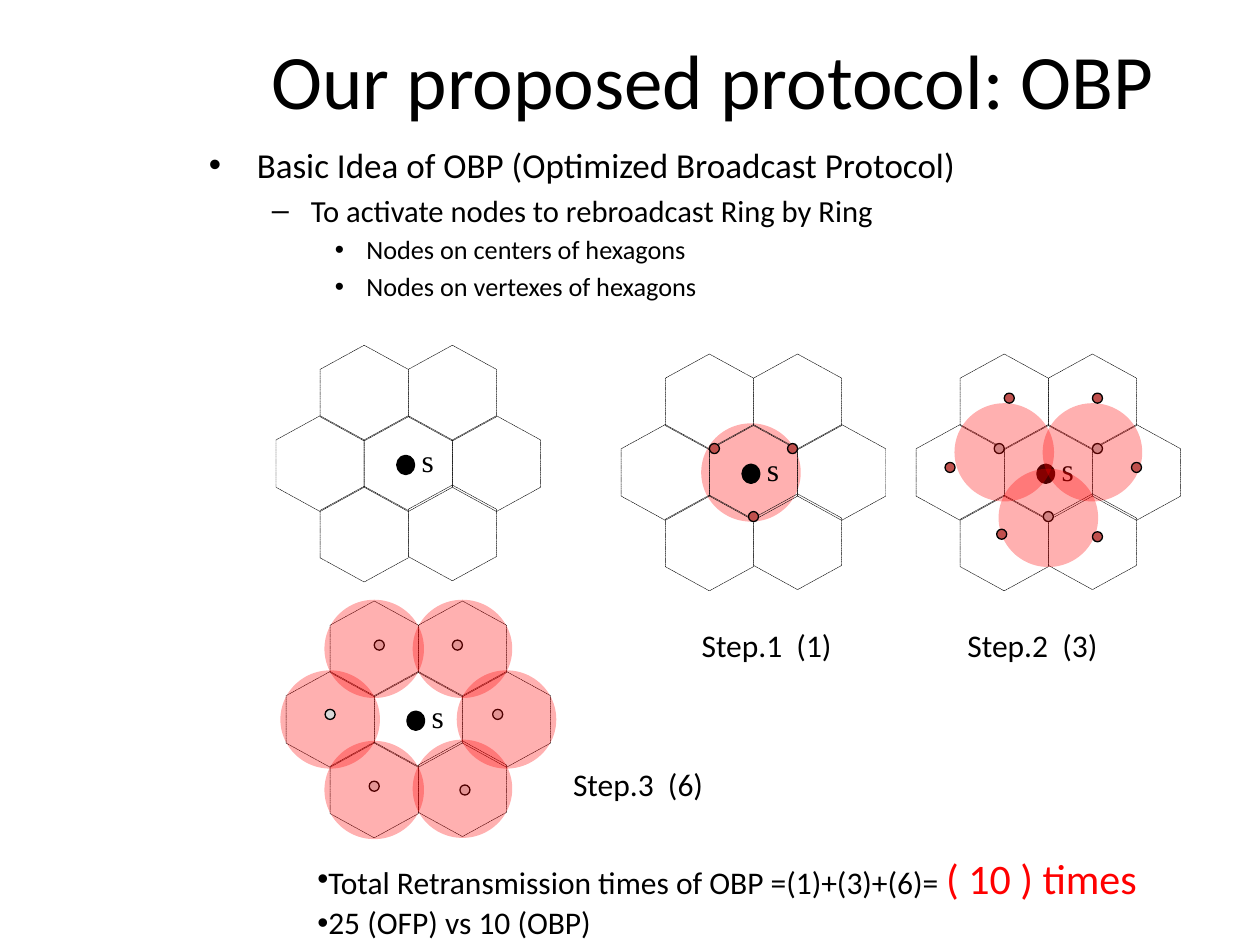
from lxml.etree import SubElement
from pptx import Presentation
from pptx.dml.color import RGBColor
from pptx.enum.dml import MSO_LINE
from pptx.enum.shapes import MSO_SHAPE
from pptx.enum.text import MSO_ANCHOR, PP_ALIGN
from pptx.oxml.ns import qn
from pptx.util import Inches, Pt

BLACK, RED = "000000", "FF0000"
ACTIVE_NODE, USED_NODE, DONE_NODE = "C0504D", "BFBFBF", "D9D9D9"
HEX_WIDTH, HEX_HEIGHT = 0.76, 0.7
WEST = (-0.7, 0)
NEIGHBOURS = [(-0.35, -0.56), (0.35, -0.56), (0.7, 0),
              (0.35, 0.55), (-0.35, 0.56)]
RING = [WEST] + NEIGHBOURS

# Centres of the four hexagon clusters
START, STEP1, STEP2, STEP3 = (3.24, 3.68), (5.98, 3.75), (8.32, 3.75), (3.32, 5.71)

# Node places relative to the centre of their cluster
STEP1_NODES = [(0.31, -0.19), (-0.31, -0.19), (0, 0.35)]
STEP2_SENDERS = [(0.39, -0.19), (0, 0.35), (-0.39, -0.19)]
STEP2_COVERAGE = [(0.35, -0.16), (-0.35, -0.16), (0, 0.36)]
STEP2_NODES = [(0.39, -0.59), (0.7, -0.04), (0.39, 0.51),
               (-0.37, 0.49), (-0.78, -0.04), (-0.31, -0.59)]
STEP3_NODES = [(0.31, -0.59), (-0.31, -0.59), (-0.7, -0.04),
               (0.63, -0.04), (0.37, 0.56), (-0.35, 0.53)]

OUTLINE = [  # text, size, left margin, hanging indent, bullet
    ("Basic Idea of OBP (Optimized Broadcast Protocol)", 20, 0.38, 0.38, "•"),
    ("To activate nodes to rebroadcast Ring by Ring", 17.5, 0.81, 0.31, "–"),
    ("Nodes on centers of hexagons", 15, 1.25, 0.25, "•"),
    ("Nodes on vertexes of hexagons", 15, 1.25, 0.25, "•"),
]
STEP_LABELS = [("Step.1  (1)", 5.47, 4.92), ("Step.2  (3)", 7.58, 4.92),
               ("Step.3  (6)", 4.45, 6.02)]


def rgb(color):
    return RGBColor.from_string(color)


def set_font(font, size, color=BLACK, name="Calibri"):
    font.size, font.name = Pt(size), name
    font.color.rgb = rgb(color)


def add_textbox(shapes, left, top, width, height, wrap=True):
    box = shapes.add_textbox(Inches(left), Inches(top), Inches(width), Inches(height))
    box.text_frame.word_wrap = wrap
    return box.text_frame


def add_line(shapes, text, left, top, width, height, size,
             name="Calibri", align=PP_ALIGN.LEFT, wrap=True):
    """Add a text box that holds one paragraph."""
    frame = add_textbox(shapes, left, top, width, height, wrap)
    paragraph = frame.paragraphs[0]
    paragraph.text, paragraph.alignment = text, align
    set_font(paragraph.font, size, name=name)
    return frame


def next_paragraph(frame, index):
    return frame.add_paragraph() if index else frame.paragraphs[0]


def add_bullet(paragraph, bullet, margin=0, hanging=0):
    properties = paragraph._p.get_or_add_pPr()
    properties.set("marL", str(Inches(margin)))
    properties.set("indent", str(-Inches(hanging)))
    SubElement(properties, qn("a:buFont"), typeface="Arial")
    SubElement(properties, qn("a:buChar"), char=bullet)


def add_centred(shapes, kind, centre, offset, width, height):
    """Add a preset shape whose middle lies at centre plus offset."""
    x, y = centre[0] + offset[0], centre[1] + offset[1]
    shape = shapes.add_shape(kind, Inches(x - width / 2), Inches(y - height / 2),
                             Inches(width), Inches(height))
    shape.shadow.inherit = False
    return shape


def add_dot(shapes, centre, offset, width, height, fill, line_width):
    dot = add_centred(shapes, MSO_SHAPE.OVAL, centre, offset, width, height)
    dot.fill.solid()
    dot.fill.fore_color.rgb = rgb(fill)
    dot.line.color.rgb = rgb(BLACK)
    dot.line.width = Pt(line_width)


def add_nodes(shapes, centre, offsets, fill):
    for offset in offsets:
        add_dot(shapes, centre, offset, 0.08, 0.08, fill, 0.75)


def add_coverage(shapes, centre, offsets):
    """Add the translucent radio range around each sender."""
    for offset in offsets:
        disc = add_centred(shapes, MSO_SHAPE.OVAL, centre, offset, 0.79, 0.78)
        disc.fill.solid()
        disc.fill.fore_color.rgb = rgb(RED)
        color = disc.fill._xPr.find(qn("a:solidFill"))[0]
        SubElement(color, qn("a:alpha"), val="31000")
        disc.line.fill.background()


def add_cluster(slide, centre):
    """Add seven hexagons around the source node s."""
    shapes = slide.shapes.add_group_shape().shapes
    add_line(shapes, "s", centre[0] - 0.1, centre[1] - 0.23, 0.51, 0.36, 18,
             "Times New Roman", PP_ALIGN.CENTER)
    for offset in [(0, 0)] + RING:
        cell = add_centred(shapes, MSO_SHAPE.HEXAGON, centre, offset,
                           HEX_WIDTH, HEX_HEIGHT)
        cell.rotation = 90
        cell.adjustments[0], cell.adjustments[1] = 0.274, 1.1547
        cell.fill.background()
        cell.line.color.rgb = rgb(BLACK)
        cell.line.width = Pt(0.25)
        cell.line.dash_style = MSO_LINE.SQUARE_DOT
    add_dot(shapes, centre, (-0.02, 0.01), 0.11, 0.12, BLACK, 3)


def add_outline(shapes):
    frame = add_textbox(shapes, 1.56, 1.09, 8.2, 1.23)
    for index, (text, size, margin, hanging, bullet) in enumerate(OUTLINE):
        paragraph = next_paragraph(frame, index)
        paragraph.text = text
        paragraph.space_before = Pt(size * 0.2)
        set_font(paragraph.font, size)
        add_bullet(paragraph, bullet, margin, hanging)


def add_totals(shapes):
    frame = add_textbox(shapes, 2.42, 6.72, 6.78, 0.81, wrap=False)
    totals = [
        [("Total Retransmission times of OBP =(1)+(3)+(6)= ", 18, BLACK),
         ("( 10 ) times", 24, RED)],
        [("25 (OFP) vs 10 (OBP)", 18, BLACK)],
    ]
    for index, parts in enumerate(totals):
        paragraph = next_paragraph(frame, index)
        add_bullet(paragraph, "•")
        for text, size, color in parts:
            run = paragraph.add_run()
            run.text = text
            set_font(run.font, size, color)


def main():
    presentation = Presentation()
    presentation.slide_width, presentation.slide_height = Inches(10), Inches(7.5)
    slide = presentation.slides.add_slide(presentation.slide_layouts[6])
    shapes = slide.shapes

    title = add_line(shapes, "Our proposed protocol: OBP", 1.56, 0, 8.2, 1.25, 44,
                     align=PP_ALIGN.CENTER)
    title.vertical_anchor = MSO_ANCHOR.MIDDLE
    add_outline(shapes)

    add_cluster(slide, START)
    add_cluster(slide, STEP3)

    add_coverage(shapes, STEP1, [(-0.02, 0)])
    add_cluster(slide, STEP1)
    add_coverage(shapes, STEP3, [WEST])
    add_nodes(shapes, STEP1, STEP1_NODES, ACTIVE_NODE)

    add_cluster(slide, STEP2)
    add_nodes(shapes, STEP2, STEP2_SENDERS, USED_NODE)
    add_coverage(shapes, STEP2, STEP2_COVERAGE)
    add_nodes(shapes, STEP2, STEP2_NODES, ACTIVE_NODE)

    add_nodes(shapes, STEP3, STEP3_NODES, DONE_NODE)
    add_coverage(shapes, STEP3, NEIGHBOURS)

    for text, left, top in STEP_LABELS:
        add_line(shapes, text, left, top, 1.26, 0.4, 18, wrap=False)
    add_totals(shapes)
    presentation.save("out.pptx")


if __name__ == "__main__":
    main()
